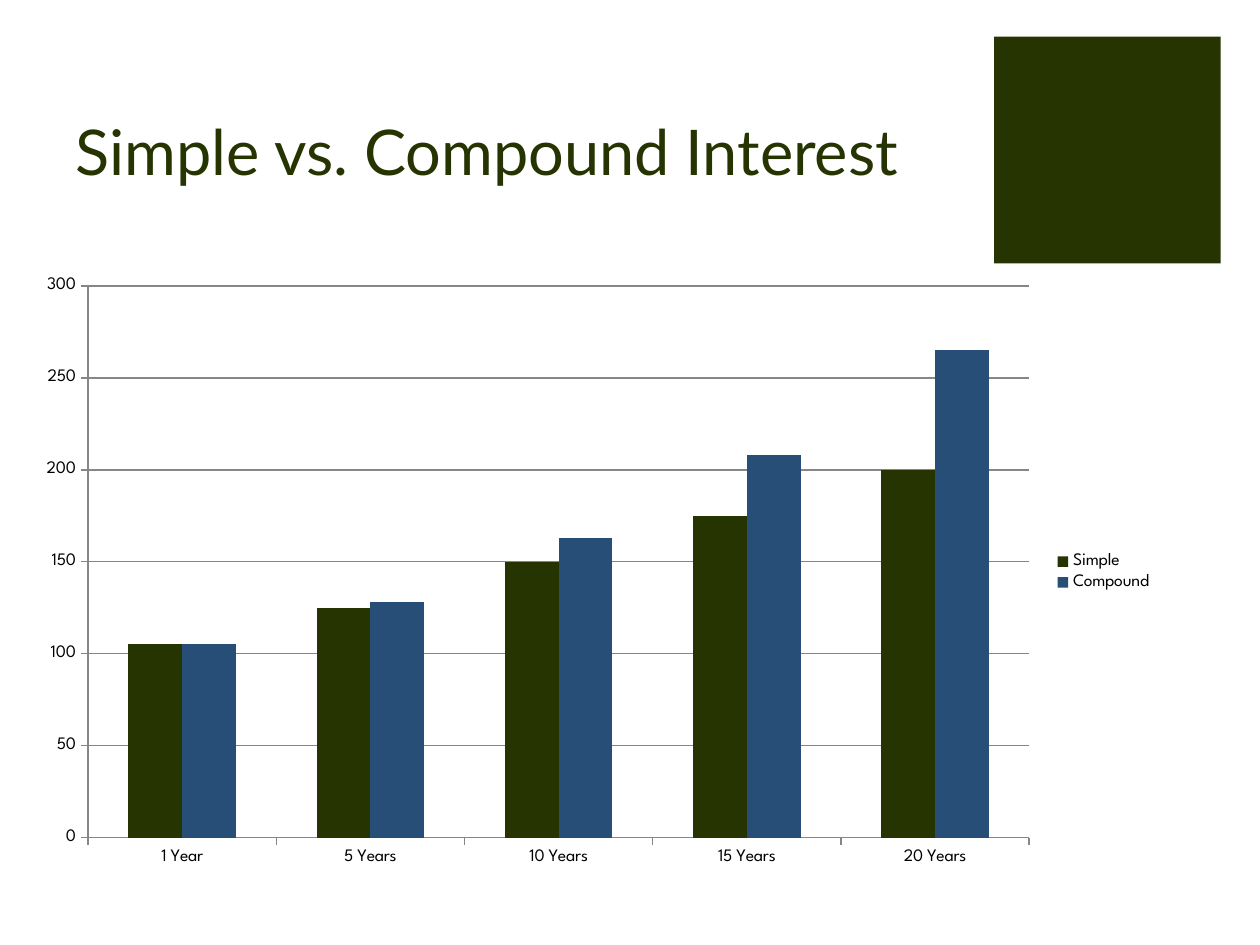
from pptx import Presentation
from pptx.chart.data import CategoryChartData
from pptx.dml.color import RGBColor
from pptx.enum.chart import XL_CHART_TYPE as CT, XL_LEGEND_POSITION as LP, XL_TICK_MARK as TM
from pptx.enum.shapes import MSO_SHAPE
from pptx.enum.text import MSO_ANCHOR
from pptx.util import Cm, Pt

TITLE = "Simple vs. Compound Interest"
YEARS = ["1 Year", "5 Years", "10 Years", "15 Years", "20 Years"]
SERIES = [
    ("Simple", [105, 125, 150, 175, 200], "263401"),
    ("Compound", [105, 128, 163, 208, 265], "264E77"),
]
GREEN, BLACK, GRAY = "263401", "000000", "868686"


def rgb(value):
    return RGBColor.from_string(value)


def set_font(font, name, size, color):
    font.name, font.size, font.color.rgb = name, Pt(size), rgb(color)


def add_text(s, text, box, *, font, size, color, anchor):
    tf = s.shapes.add_textbox(*map(Cm, box)).text_frame
    tf.word_wrap = True
    tf.vertical_anchor = anchor
    r = tf.paragraphs[0].add_run()
    r.text = text
    set_font(r.font, font, size, color)


def add_square(s, box, color):
    sp = s.shapes.add_shape(MSO_SHAPE.RECTANGLE, *map(Cm, box))
    sp.shadow.inherit = False
    sp.fill.solid()
    sp.fill.fore_color.rgb = rgb(color)
    sp.line.fill.background()


def style_line(line):
    line.color.rgb = rgb(GRAY)
    line.width = Pt(0.75)


def add_interest_chart(s, box):
    data = CategoryChartData()
    data.categories = YEARS
    for name, values, _ in SERIES:
        data.add_series(name, values)
    chart = s.shapes.add_chart(CT.COLUMN_CLUSTERED, *map(Cm, box), data).chart
    set_font(chart.font, "League Spartan", 10, BLACK)
    chart.has_title = False
    chart.has_legend = True
    chart.legend.position = LP.RIGHT
    chart.legend.include_in_layout = False

    plot = chart.plots[0]
    plot.gap_width = 150
    plot.overlap = 0
    plot.vary_by_categories = False
    for series, (_, _, color) in zip(plot.series, SERIES):
        series.format.fill.solid()
        series.format.fill.fore_color.rgb = rgb(color)

    for axis in (chart.category_axis, chart.value_axis):
        axis.major_tick_mark = TM.OUTSIDE
        axis.minor_tick_mark = TM.NONE
        style_line(axis.format.line)
    axis = chart.value_axis
    axis.minimum_scale, axis.maximum_scale, axis.major_unit = 0, 300, 50
    axis.has_major_gridlines = True
    style_line(axis.major_gridlines.format.line)


prs = Presentation()
prs.slide_width, prs.slide_height = Cm(25.4), Cm(19.05)
s = prs.slides.add_slide(prs.slide_layouts[6])
add_square(s, (20.04, 0.74, 4.57, 4.57), GREEN)
add_text(s, TITLE, (1.27, 0.74, 18.08, 3.18), font="Lato", size=36,
         color=GREEN, anchor=MSO_ANCHOR.BOTTOM)
add_interest_chart(s, (0.48, 5.36, 23.01, 12.34))
prs.save("out.pptx")
